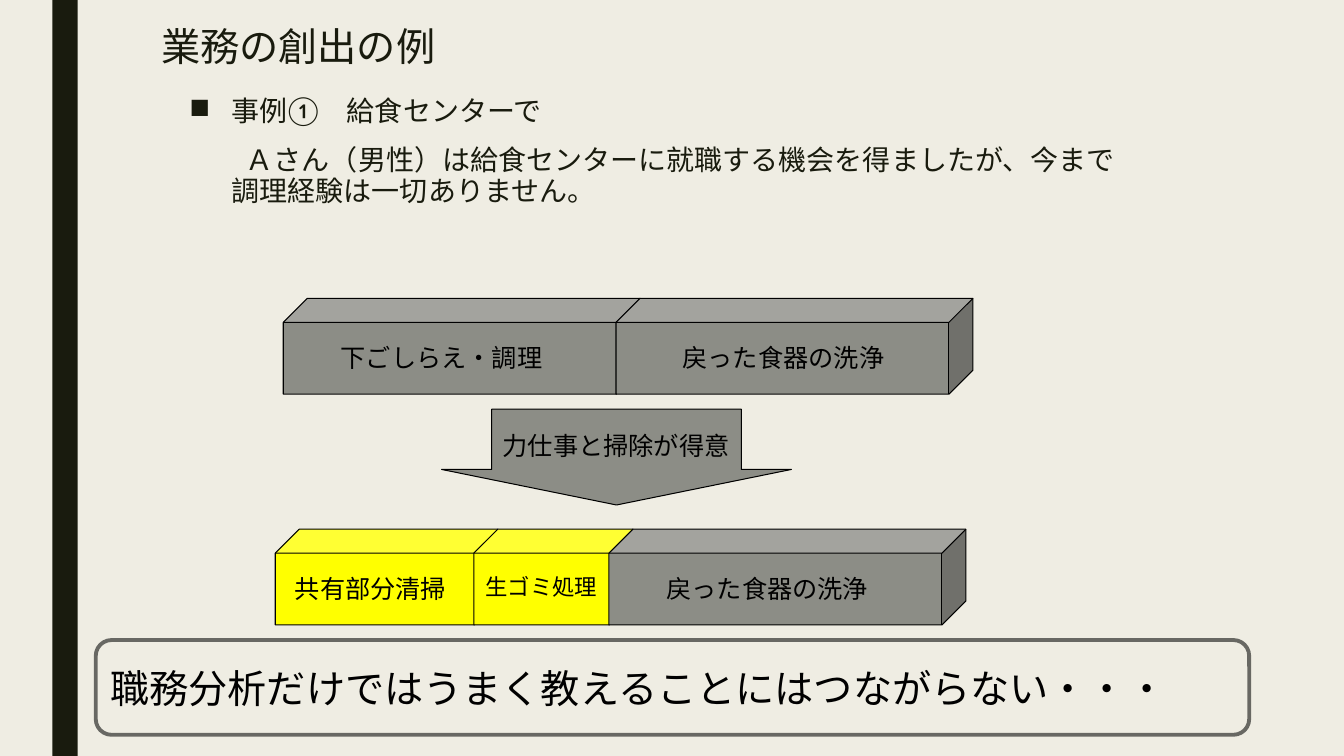
from pptx import Presentation
from pptx.dml.color import RGBColor
from pptx.enum.shapes import MSO_SHAPE as Preset
from pptx.enum.text import MSO_ANCHOR as Anchor, PP_ALIGN as Align
from pptx.oxml.ns import qn
from pptx.util import Inches, Pt
from lxml.etree import SubElement

INK, BLACK, GRAY, YELLOW = "191B0E", "000000", "8C8D86", "FFFF00"
CUBE_HEIGHT, CUBE_DEPTH = 0.95, 0.24


def rgb(value):
    return RGBColor.from_string(value)


class SlideBuilder:
    font = "Lato"

    def __init__(self, slide):
        self.slide = slide

    def style(self, paragraph, size, color):
        for run in paragraph.runs:
            run.font.name = self.font
            run.font.size = Pt(size)
            run.font.color.rgb = rgb(color)
            SubElement(run.font._element, qn("a:ea")).set("typeface", self.font)

    def shape(self, preset, box, fill=None, line=None, weight=0.75, adjust=()):
        shape = self.slide.shapes.add_shape(preset, *map(Inches, box))
        shape.shadow.inherit = False
        for i, value in enumerate(adjust):
            shape.adjustments[i] = value
        if fill:
            shape.fill.solid()
            shape.fill.fore_color.rgb = rgb(fill)
        else:
            shape.fill.background()
        if line:
            shape.line.color.rgb = rgb(line)
            shape.line.width = Pt(weight)
        else:
            shape.line.fill.background()
        return shape

    def text(self, box, lines, size, color=BLACK, align=Align.LEFT):
        frame = self.slide.shapes.add_textbox(*map(Inches, box)).text_frame
        frame.word_wrap = True
        frame.text = "\n".join(lines)
        for paragraph in frame.paragraphs:
            paragraph.alignment = align
            self.style(paragraph, size, color)
        return frame

    def indent(self, paragraph, margin, first, bullet=None):
        props = paragraph._p.get_or_add_pPr()
        props.set("marL", str(Inches(margin)))
        props.set("indent", str(Inches(first)))
        if bullet:
            SubElement(props, qn("a:buChar")).set("char", bullet)

    def cube_row(self, left, top, cubes):
        for face, fill, label, label_left, label_width, size in cubes:
            self.shape(Preset.CUBE, (left, top, face + CUBE_DEPTH, CUBE_HEIGHT),
                       fill, BLACK, adjust=[0.25])
            self.text((label_left, top + 0.39, label_width, 0.4), [label], size,
                      align=Align.CENTER)
            left += face


def main():
    deck = Presentation()
    deck.slide_width, deck.slide_height = Inches(13.33), Inches(7.5)
    slide = deck.slides.add_slide(deck.slide_layouts[6])
    slide.background.fill.solid()
    slide.background.fill.fore_color.rgb = rgb("EFEDE3")
    builder = SlideBuilder(slide)

    # Side band and title
    builder.shape(Preset.RECTANGLE, (0.52, 0, 0.25, 7.5), INK)
    title = builder.text((1.5, 0.23, 10.5, 0.6), ["業務の創出の例"], 28, INK)
    title.paragraphs[0].line_spacing = 0.89

    # Case description
    case = builder.text((1.78, 0.91, 9.53, 1.89), [
        "事例①　給食センターで",
        "Ａさん（男性）は給食センターに就職する機会を得ましたが、今まで調理経験は一切ありません。",
    ], 20, INK)
    for paragraph in case.paragraphs:
        paragraph.line_spacing = 0.94
        paragraph.space_before, paragraph.space_after = Pt(10), Pt(2)
    heading, story = case.paragraphs
    builder.indent(heading, 0.42, -0.42, "■")
    builder.indent(story, 0.42, 0.14)

    # Duties before
    builder.cube_row(2.81, 2.96, [
        (3.3, GRAY, "下ごしらえ・調理", 3.2, 2.36, 18),
        (3.3, GRAY, "戻った食器の洗浄", 6.59, 2.36, 18),
    ])

    # Strengths that change the duties
    builder.shape(Preset.DOWN_ARROW, (4.38, 4.06, 3.47, 0.95), GRAY, BLACK,
                  adjust=[0.714, 0.371])
    builder.text((4.85, 4.22, 2.52, 0.4), ["力仕事と掃除が得意"], 18,
                 align=Align.CENTER)

    # Duties after
    builder.cube_row(2.73, 5.25, [
        (1.97, YELLOW, "共有部分清掃", 2.81, 1.73, 18),
        (1.34, YELLOW, "生ゴミ処理", 4.7, 1.34, 16),
        (3.3, GRAY, "戻った食器の洗浄", 6.43, 2.36, 18),
    ])

    # Conclusion
    conclusion = builder.shape(Preset.ROUNDED_RECTANGLE, (0.95, 6.35, 11.44, 0.94),
                               line="686863", weight=2.75)
    frame = conclusion.text_frame
    frame.text = "職務分析だけではうまく教えることにはつながらない・・・"
    frame.vertical_anchor = Anchor.MIDDLE
    frame.paragraphs[0].alignment = Align.LEFT
    builder.style(frame.paragraphs[0], 28, BLACK)

    deck.save("out.pptx")


if __name__ == "__main__":
    main()
